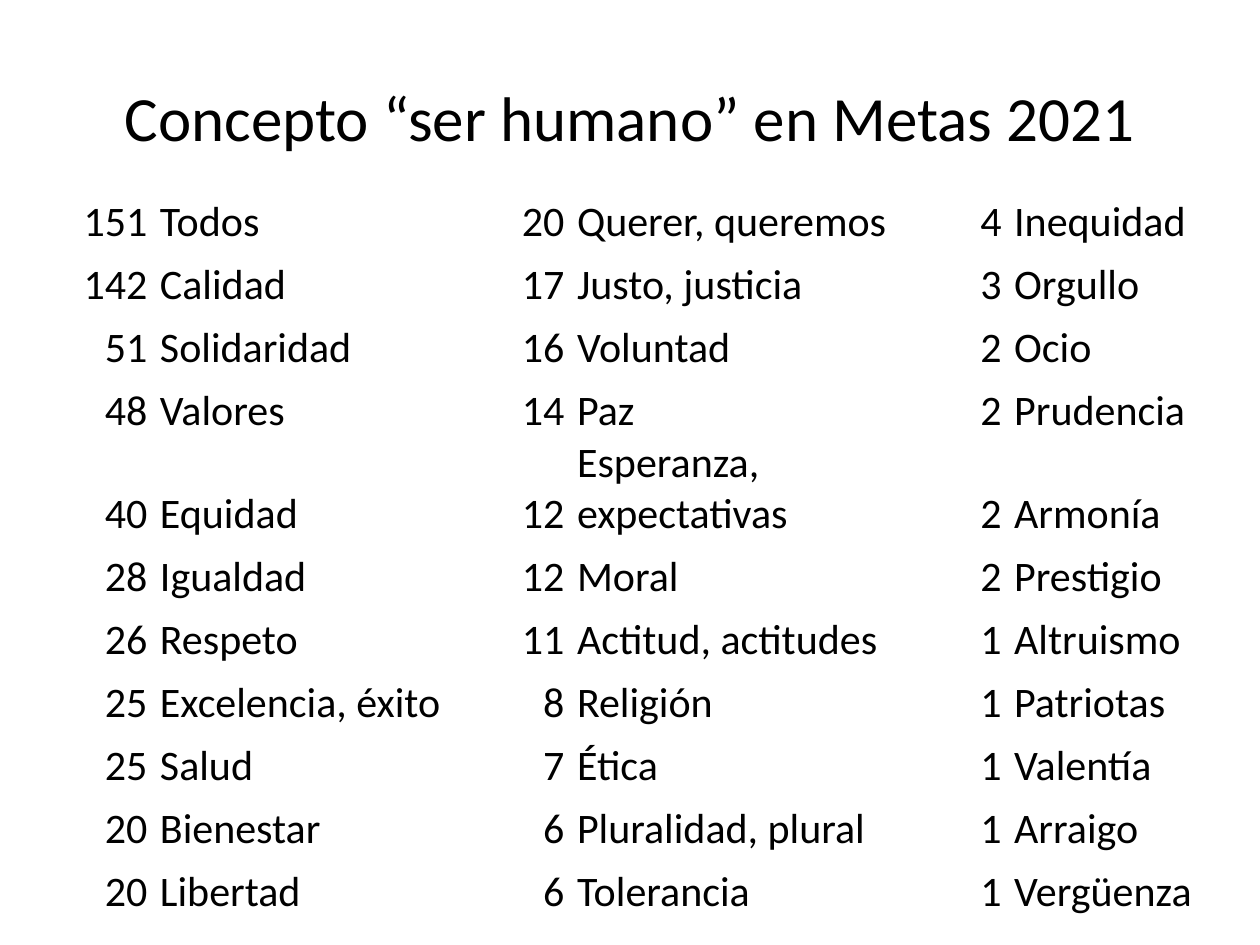
"""Build a slide listing how often human values are mentioned in Metas 2021."""
import pptx
import pptx.dml.color
import pptx.enum.text
import pptx.util
from pptx.util import Inches

COLORS = {"text": "000000"}
FONT = "Calibri"
COLUMN_WIDTHS = [0.87, 2.65, 0.66, 2.95, 0.52, 1.57]
ROW_HEIGHT = 0.5
WORD_COUNTS = [
    [(151, "Todos"), (20, "Querer, queremos"), (4, "Inequidad")],
    [(142, "Calidad"), (17, "Justo, justicia"), (3, "Orgullo")],
    [(51, "Solidaridad"), (16, "Voluntad"), (2, "Ocio")],
    [(48, "Valores"), (14, "Paz"), (2, "Prudencia")],
    [(40, "Equidad"), (12, "Esperanza, expectativas"), (2, "Armonía")],
    [(28, "Igualdad"), (12, "Moral"), (2, "Prestigio")],
    [(26, "Respeto"), (11, "Actitud, actitudes"), (1, "Altruismo")],
    [(25, "Excelencia, éxito"), (8, "Religión"), (1, "Patriotas")],
    [(25, "Salud"), (7, "Ética"), (1, "Valentía")],
    [(20, "Bienestar"), (6, "Pluralidad, plural"), (1, "Arraigo")],
    [(20, "Libertad"), (6, "Tolerancia"), (1, "Vergüenza")],
]


def format_paragraph(paragraph, size, alignment):
    paragraph.alignment = alignment
    paragraph.font.name = FONT
    paragraph.font.size = pptx.util.Pt(size)
    paragraph.font.color.rgb = pptx.dml.color.RGBColor.from_string(COLORS["text"])


def set_title(slide, text):
    title = slide.shapes.title
    title.left, title.top = Inches(0.5), Inches(0.3)
    title.width, title.height = Inches(9), Inches(1.25)
    title.text_frame.text = text
    title.text_frame.vertical_anchor = pptx.enum.text.MSO_ANCHOR.MIDDLE
    format_paragraph(title.text_frame.paragraphs[0], 36, pptx.enum.text.PP_ALIGN.CENTER)


def fill_cell(cell, value, alignment):
    cell.text = str(value)
    cell.fill.background()
    cell.vertical_anchor = pptx.enum.text.MSO_ANCHOR.BOTTOM
    cell.margin_left = cell.margin_right = Inches(0.05)
    cell.margin_top = cell.margin_bottom = 0
    format_paragraph(cell.text_frame.paragraphs[0], 24, alignment)


def add_word_table(slide):
    frame = slide.shapes.add_table(
        len(WORD_COUNTS), len(COLUMN_WIDTHS), Inches(0.35), Inches(1.47),
        Inches(sum(COLUMN_WIDTHS)), Inches(ROW_HEIGHT * len(WORD_COUNTS)))
    table = frame.table
    table.first_row = False
    table.horz_banding = False
    for column, width in zip(table.columns, COLUMN_WIDTHS):
        column.width = Inches(width)
    for row, entries in zip(table.rows, WORD_COUNTS):
        row.height = Inches(ROW_HEIGHT)
        for index, (count, word) in enumerate(entries):
            fill_cell(row.cells[2 * index], count, pptx.enum.text.PP_ALIGN.RIGHT)
            fill_cell(row.cells[2 * index + 1], word, pptx.enum.text.PP_ALIGN.LEFT)


def main():
    presentation = pptx.Presentation()
    presentation.slide_width, presentation.slide_height = Inches(10), Inches(7.5)
    slide = presentation.slides.add_slide(presentation.slide_layouts[5])
    set_title(slide, "Concepto “ser humano” en Metas 2021")
    add_word_table(slide)
    presentation.save("out.pptx")


if __name__ == "__main__":
    main()
